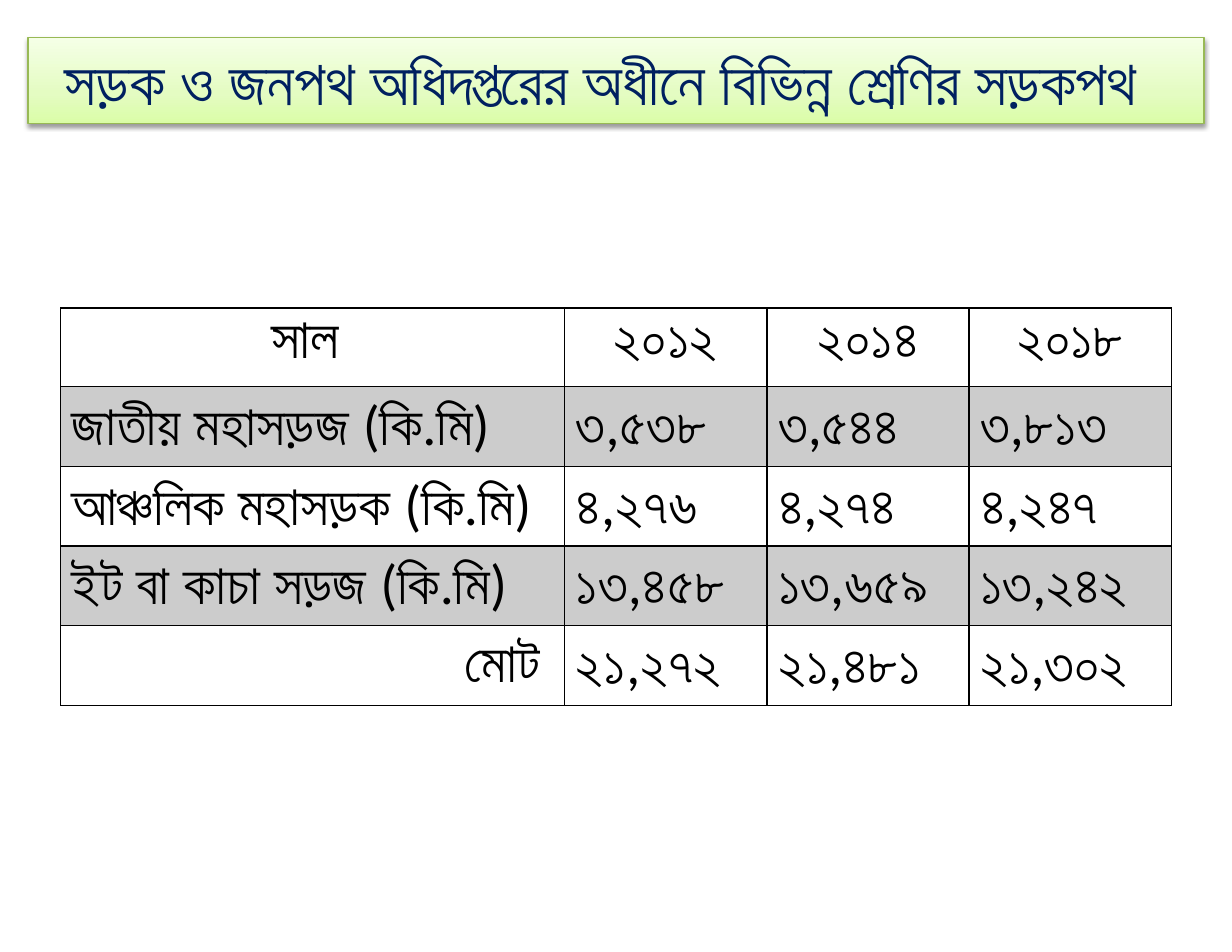
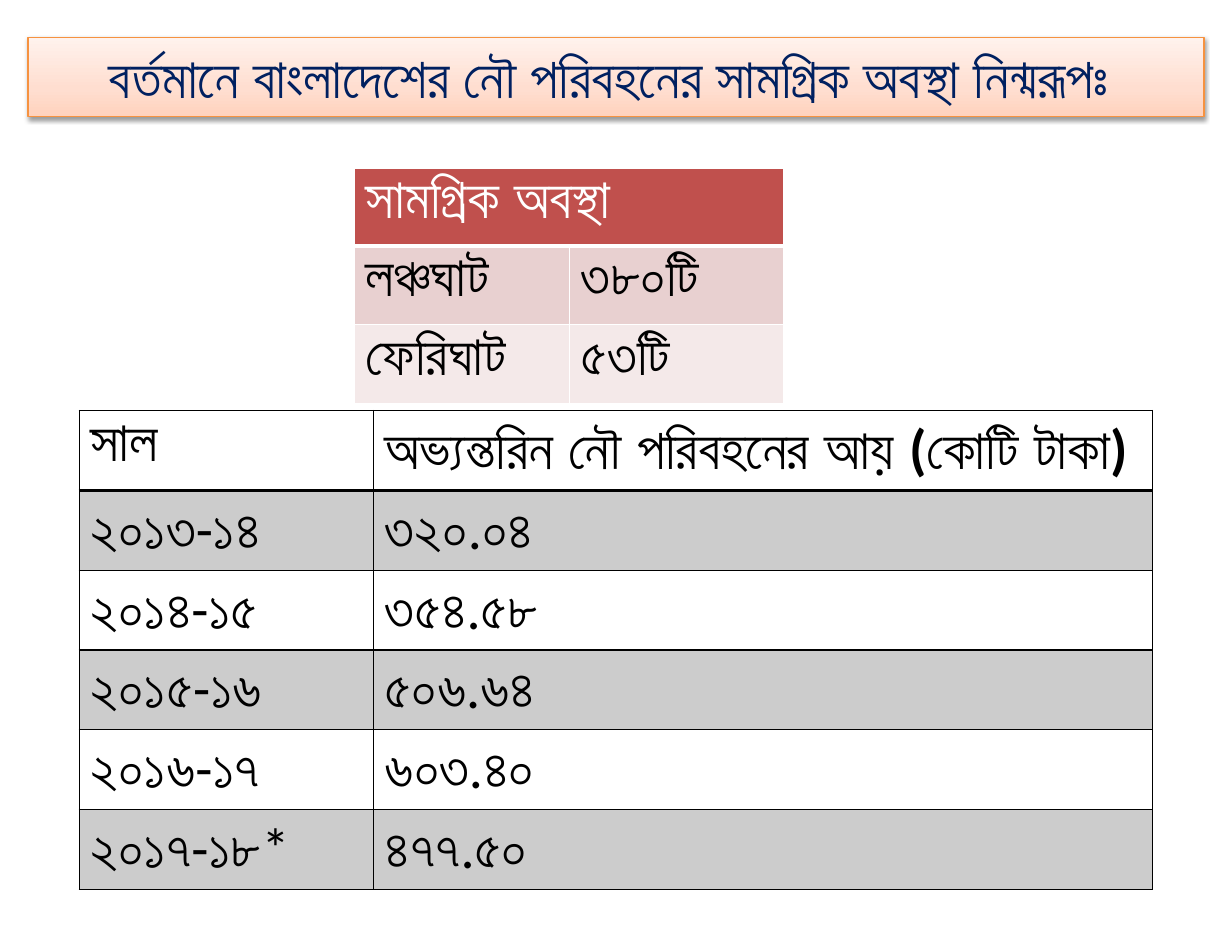
import pptx
import pptx.util
import pptx.dml.color
import pptx.enum.text
import pptx.oxml
import pptx.oxml.ns
from lxml import etree

Pt = pptx.util.Pt
qn = pptx.oxml.ns.qn
ALIGN = pptx.enum.text.PP_ALIGN
ANCHOR = pptx.enum.text.MSO_ANCHOR
A = pptx.oxml.ns.nsdecls("a")
FONT = "Calibri"
BLACK, WHITE, NAVY = "000000", "FFFFFF", "002060"
SHADE = (BLACK, 20)  # colour and opacity in percent
NO_STYLE = "{2D5ABB26-0587-4C30-8999-92F81FD0307C}"
INSET = 7.2
ROW_H = 50.4
GREEN_BAND = ("DAFDA7", "E4FCC2", "F5FFE7")
ORANGE_BAND = ("FFD2BD", "FFDED0", "FFF2ED")
NUKTA = chr(0x09BC)
DOTTED = {chr(0x09A1): chr(0x09DC), chr(0x09AF): chr(0x09DF)}


def rgb(code):
    return pptx.dml.color.RGBColor.from_string(code)


def compose(text):
    """Join a Bengali letter and its nukta into the single dotted letter."""
    for base, dotted in DOTTED.items():
        text = text.replace(base + NUKTA, dotted)
    return text


def set_font(p, size, color, bold=False):
    p.font.name = FONT
    p.font.size = Pt(size)
    p.font.bold = bold
    p.font.color.rgb = rgb(color)


def add_title(s, box, text, size, stops, line, pad):
    """Title band with an upward gradient; pad widens the right inset."""
    sp = s.shapes.title
    sp.left, sp.top, sp.width, sp.height = (Pt(v) for v in box)

    # Gradient, outline and shadow
    sp.fill.gradient()
    sp.fill.gradient_angle = 90
    gs_list = sp._element.spPr.find(".//" + qn("a:gsLst"))
    for gs in list(gs_list):
        gs_list.remove(gs)
    for pos, color in zip((0, 35, 100), stops):
        gs_list.append(pptx.oxml.parse_xml(
            f'<a:gs {A} pos="{pos * 1000}"><a:srgbClr val="{color}"/></a:gs>'))
    sp.line.color.rgb = rgb(line)
    sp.line.width = Pt(0.75)
    sp._element.spPr.append(pptx.oxml.parse_xml(
        f'<a:effectLst {A}><a:outerShdw blurRad="{Pt(3.1)}" dist="{Pt(1.6)}" '
        'dir="5400000" rotWithShape="0"><a:srgbClr val="000000">'
        '<a:alpha val="38000"/></a:srgbClr></a:outerShdw></a:effectLst>'))

    # Text
    tf = sp.text_frame
    tf.text = compose(text)
    tf.word_wrap = True
    tf.auto_size = pptx.enum.text.MSO_AUTO_SIZE.NONE
    tf.vertical_anchor = ANCHOR.TOP
    tf.margin_right = Pt(INSET + pad)
    p = tf.paragraphs[0]
    p.alignment = ALIGN.CENTER
    set_font(p, size, NAVY)


def set_borders(cell, color, top, bottom):
    tc_pr = cell._tc.get_or_add_tcPr()
    for side, width in (("L", 1), ("R", 1), ("T", top), ("B", bottom)):
        tc_pr.append(pptx.oxml.parse_xml(
            f'<a:ln{side} {A} w="{Pt(width)}"><a:solidFill>'
            f'<a:srgbClr val="{color}"/></a:solidFill></a:ln{side}>'))


def set_fill(cell, fill):
    if fill is None:
        cell.fill.background()
        return
    color, opacity = fill
    cell.fill.solid()
    cell.fill.fore_color.rgb = rgb(color)
    if opacity < 100:
        clr = cell._tc.tcPr.find(qn("a:solidFill")).find(qn("a:srgbClr"))
        etree.SubElement(clr, qn("a:alpha"), val=str(opacity * 1000))


def add_grid(s, left, top, col_widths, rows, fills, border=BLACK,
             header_line=1, header_color=BLACK):
    """Table with a bold header row and one fill per row."""
    tbl = s.shapes.add_table(len(rows), len(col_widths), Pt(left), Pt(top),
                             Pt(sum(col_widths)), Pt(ROW_H * len(rows))).table
    tbl._tbl.tblPr.find(qn("a:tableStyleId")).text = NO_STYLE
    tbl.first_row = tbl.horz_banding = False
    for col, width in zip(tbl.columns, col_widths):
        col.width = Pt(width)
    for i, (texts, fill) in enumerate(zip(rows, fills)):
        tbl.rows[i].height = Pt(ROW_H)
        for j in range(len(col_widths)):
            cell = tbl.cell(i, j)
            set_borders(cell, border, header_line if i == 1 else 1,
                        header_line if i == 0 else 1)
            set_fill(cell, fill)
            if j < len(texts):
                cell.text = compose(texts[j])
                set_font(cell.text_frame.paragraphs[0], 36,
                         header_color if i == 0 else BLACK, bold=i == 0)
    return tbl


def roads_slide(prs):
    s = prs.slides.add_slide(prs.slide_layouts[5])
    add_title(s, (18, 24, 756, 55.5),
              "সড়ক ও জনপথ অধিদপ্তরের অধীনে বিভিন্ন শ্রেণির সড়কপথ",
              40, GREEN_BAND, "98B955", 20)

    # Road lengths by class and year
    rows = [
        ("সাল ", "২০১২", "২০১৪", "২০১৮"),
        ("জাতীয় মহাসড়জ (কি.মি)", "৩,৫৩৮", "৩,৫৪৪", "৩,৮১৩"),
        ("আঞ্চলিক মহাসড়ক (কি.মি)", "৪,২৭৬", "৪,২৭৪", "৪,২৪৭"),
        ("ইট বা কাচা সড়জ (কি.মি)", "১৩,৪৫৮", "১৩,৬৫৯", "১৩,২৪২"),
        ("মোট ", "২১,২৭২", "২১,৪৮১", "২১,৩০২"),
    ]
    tbl = add_grid(s, 39, 198, (324, 130, 130, 130), rows,
                   (None, SHADE, None, SHADE, None))
    for j in range(4):
        tbl.cell(0, j).text_frame.paragraphs[0].alignment = ALIGN.CENTER
    total = tbl.cell(4, 0)
    total.vertical_anchor = ANCHOR.MIDDLE
    total.text_frame.paragraphs[0].alignment = ALIGN.RIGHT


def waterways_slide(prs):
    s = prs.slides.add_slide(prs.slide_layouts[5])
    add_title(s, (18, 24, 756, 51),
              "বর্তমানে বাংলাদেশের নৌ পরিবহনের সামগ্রিক অবস্থা নিন্মরূপঃ",
              36, ORANGE_BAND, "F69240", 9.5)

    # Landing stations
    stations = [("সামগ্রিক অবস্থা",), ("লঞ্চঘাট", "৩৮০টি"), ("ফেরিঘাট", "৫৩টি")]
    fills = [(color, 100) for color in ("C0504D", "E8D0D0", "F4E9E9")]
    tbl = add_grid(s, 228, 108, (138, 138), stations, fills, border=WHITE,
                   header_line=3, header_color=WHITE)
    tbl.cell(0, 0).merge(tbl.cell(0, 1))

    # Yearly income
    income = [
        ("সাল", "অভ্যন্তরিন নৌ পরিবহনের আয় (কোটি টাকা)"),
        ("২০১৩-১৪", "৩২০.০৪"),
        ("২০১৪-১৫", "৩৫৪.৫৮"),
        ("২০১৫-১৬", "৫০৬.৬৪"),
        ("২০১৬-১৭", "৬০৩.৪০"),
        ("২০১৭-১৮*", "৪৭৭.৫০"),
    ]
    add_grid(s, 51, 264, (189.3, 500.5), income, (None, SHADE) * 3, header_line=2)


def main():
    prs = pptx.Presentation()
    prs.slide_width, prs.slide_height = Pt(792), Pt(612)
    roads_slide(prs)
    waterways_slide(prs)
    prs.save("out.pptx")


if __name__ == "__main__":
    main()
